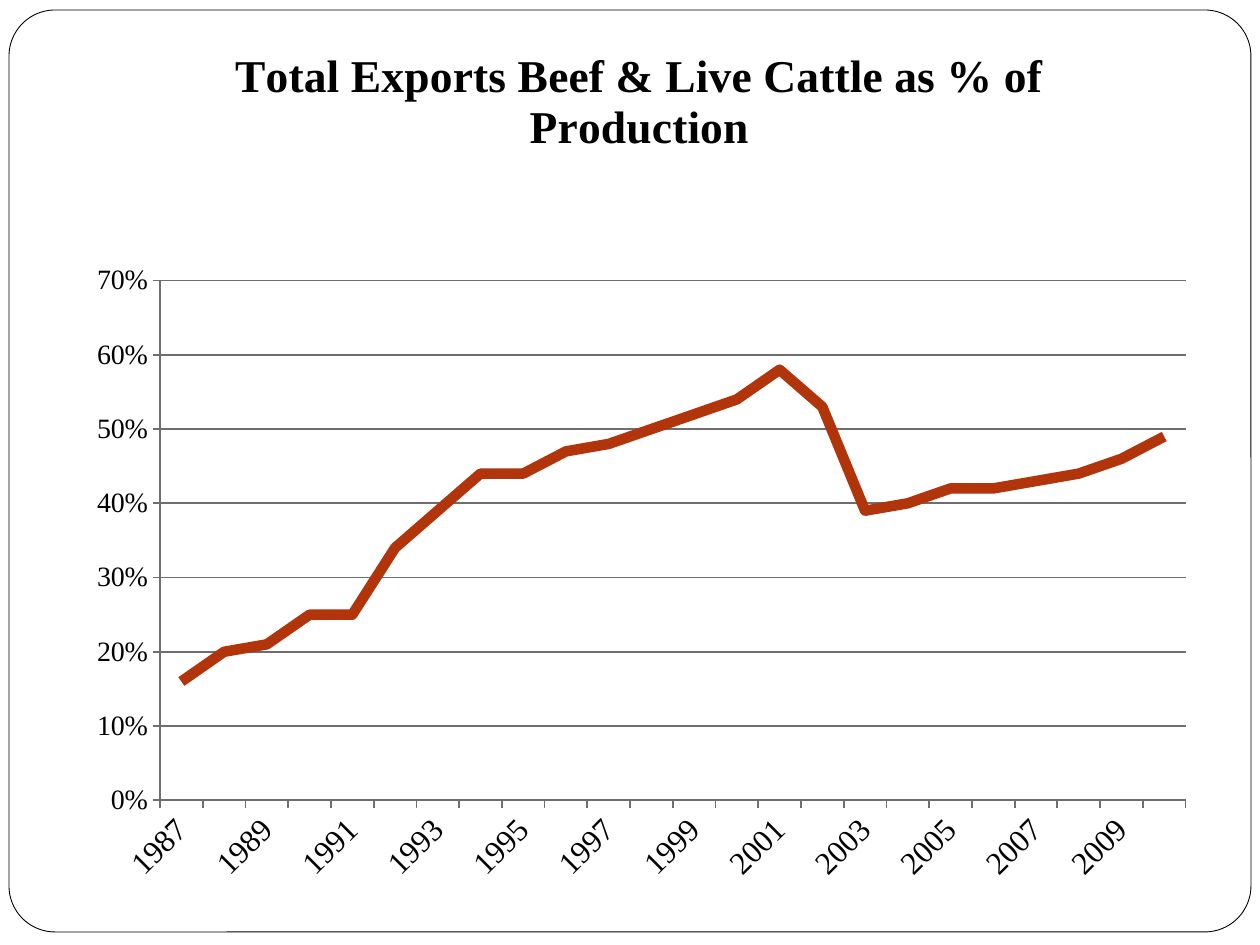
import pptx
import pptx.util
import pptx.chart.data
import pptx.dml.color
import pptx.enum.chart
import pptx.enum.shapes
import pptx.oxml

PX = 914400 // 126
BLACK = pptx.dml.color.RGBColor(0x00, 0x00, 0x00)
WHITE = pptx.dml.color.RGBColor(0xFF, 0xFF, 0xFF)
GREY = pptx.dml.color.RGBColor(0x6E, 0x6E, 0x6E)
RUST = pptx.dml.color.RGBColor(0xB1, 0x34, 0x0B)
FONT = "Times New Roman"
NS = 'xmlns:c="http://schemas.openxmlformats.org/drawingml/2006/chart"'


def set_font(font, size, bold=False):
    font.name = FONT
    font.size = pptx.util.Pt(size)
    font.bold = bold
    font.color.rgb = BLACK


def layout(x, y, w=None, h=None):
    target = '<c:layoutTarget val="inner"/>' if w else ""
    size = f'<c:w val="{w}"/><c:h val="{h}"/>' if w else ""
    return pptx.oxml.parse_xml(
        f'<c:layout {NS}><c:manualLayout>{target}<c:xMode val="edge"/>'
        f'<c:yMode val="edge"/><c:x val="{x}"/><c:y val="{y}"/>{size}'
        "</c:manualLayout></c:layout>")


prs = pptx.Presentation()
prs.slide_width = pptx.util.Inches(10)
prs.slide_height = pptx.util.Inches(7.5)
s = prs.slides.add_slide(prs.slide_layouts[6])

# Rounded frame
sp = s.shapes.add_shape(pptx.enum.shapes.MSO_SHAPE.ROUNDED_RECTANGLE,
                        9 * PX, 10 * PX, 1242 * PX, 922 * PX)
sp.adjustments[0] = 0.05
sp.shadow.inherit = False
sp.fill.solid()
sp.fill.fore_color.rgb = WHITE
sp.line.color.rgb = BLACK
sp.line.width = pptx.util.Pt(0.5)

# Line chart
data = pptx.chart.data.CategoryChartData(number_format="0%")
data.categories = [str(year) for year in range(1987, 2011)]
percents = [16, 20, 21, 25, 25, 34, 39, 44, 44, 47, 48, 50,
            52, 54, 58, 53, 39, 40, 42, 42, 43, 44, 46, 49]
data.add_series("Series 1", [v / 100 for v in percents])
chart = s.shapes.add_chart(pptx.enum.chart.XL_CHART_TYPE.LINE, 0, 0,
                           prs.slide_width, prs.slide_height, data).chart
chart.has_legend = False
set_font(chart.font, 10)
plot = chart.plots[0]
plot.vary_by_categories = False
series = plot.series[0]
series.smooth = False
series.marker.style = pptx.enum.chart.XL_MARKER_STYLE.NONE
series.format.line.color.rgb = RUST
series.format.line.width = pptx.util.Pt(6)

# Title
chart.has_title = True
tf = chart.chart_title.text_frame
p = tf.paragraphs[0]
p.text = "Total Exports Beef & Live Cattle as % of Production"
set_font(p.font, 26, bold=True)
chart.chart_title.include_in_layout = False
title = chart.chart_title._element
for old in title.findall(pptx.oxml.ns.qn("c:layout")):
    title.remove(old)
title.find(pptx.oxml.ns.qn("c:tx")).addnext(layout(0.18, 0.04))

# Plot area
area = plot._element.getparent()
for old in area.findall(pptx.oxml.ns.qn("c:layout")):
    area.remove(old)
area.insert(0, layout(0.127, 0.297, 0.814, 0.55))

# Axes
cat, val = chart.category_axis, chart.value_axis
for axis, size in ((cat, 18), (val, 16)):
    set_font(axis.tick_labels.font, size)
    axis.major_tick_mark = pptx.enum.chart.XL_TICK_MARK.OUTSIDE
    axis.minor_tick_mark = pptx.enum.chart.XL_TICK_MARK.NONE
    axis.format.line.color.rgb = GREY
    axis.format.line.width = pptx.util.Pt(1)
cat.has_major_gridlines = False
val.has_major_gridlines = True
val.major_gridlines.format.line.color.rgb = GREY
val.major_gridlines.format.line.width = pptx.util.Pt(1)
val.minimum_scale, val.maximum_scale, val.major_unit = 0, 0.7, 0.1
val.tick_labels.number_format = "0%"
val.tick_labels.number_format_is_linked = False

# Slanted label on every second year
body = cat._element.find(pptx.oxml.ns.qn("c:txPr")).find(pptx.oxml.ns.qn("a:bodyPr"))
body.set("rot", "-2700000")
body.set("vert", "horz")
skip = pptx.oxml.parse_xml(f'<c:tickLblSkip {NS} val="2"/>')
marks = pptx.oxml.parse_xml(f'<c:tickMarkSkip {NS} val="1"/>')
cat._element.find(pptx.oxml.ns.qn("c:lblOffset")).addnext(skip)
skip.addnext(marks)

prs.save("out.pptx")
